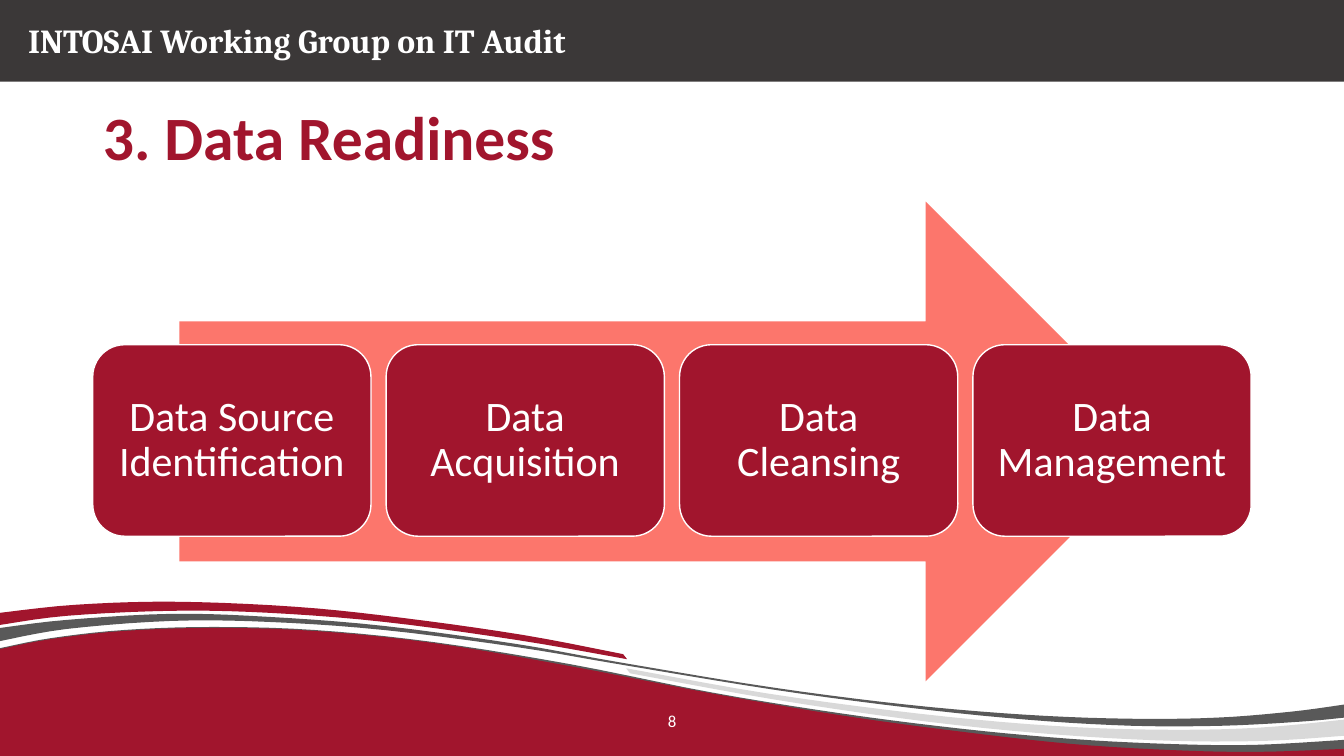
import pptx
import pptx.util
import pptx.dml.color
import pptx.enum.shapes
import pptx.enum.text

Inches = pptx.util.Inches
Pt = pptx.util.Pt
SHAPE = pptx.enum.shapes.MSO_SHAPE
ALIGN = pptx.enum.text.PP_ALIGN
MIDDLE = pptx.enum.text.MSO_ANCHOR.MIDDLE

WIDTH, HEIGHT = 13.33, 7.5
HEADER = "INTOSAI Working Group on IT Audit"
TITLE = "3. Data Readiness"
STEPS = ["Data Source Identification", "Data Acquisition", "Data Cleansing", "Data Management"]
PAGE = "8"
COLORS = {"red": "A1152D", "gray": "595959", "silver": "D9D9D9",
          "dark": "3B3838", "coral": "FC766C", "white": "FFFFFF"}

FLOOR = [(0, HEIGHT), (WIDTH, HEIGHT)]
WAVES = [
    ("gray",
     [(0, 6.43), (0.51, 6.33), (1.23, 6.25), (2.1, 6.22), (3.12, 6.25), (4.3, 6.37),
      (5.66, 6.59), (7.06, 6.87), (8.36, 7.08), (9.54, 7.23), (10.62, 7.33),
      (11.58, 7.38), (12.44, 7.39), (13.33, 7.34)],
     FLOOR),
    ("red",
     [(0, 6.44), (0.51, 6.34), (1.23, 6.26), (2.1, 6.23), (3.12, 6.26), (4.3, 6.38),
      (5.66, 6.61), (7.06, 6.88), (8.36, 7.1), (9.54, 7.26), (10.62, 7.38),
      (11.58, 7.44), (12.44, 7.46), (13.33, 7.43)],
     FLOOR),
    ("gray",
     [(0, 6.23), (0.66, 6.15), (1.7, 6.09), (2.67, 6.12), (3.81, 6.21), (5.13, 6.39),
      (6.14, 6.57), (7.66, 6.82), (8.99, 6.99), (10.16, 7.09), (11.18, 7.13),
      (12.06, 7.12), (12.81, 7.06), (13.33, 6.99)],
     [(0, 6.36), (0.66, 6.24), (1.7, 6.16), (2.67, 6.17), (3.81, 6.25), (5.13, 6.42),
      (6.14, 6.59), (7.66, 6.84), (9.01, 7.02), (10.19, 7.14), (11.22, 7.2),
      (12.12, 7.2), (12.89, 7.16), (13.33, 7.12)]),
    ("red",
     [(0, 6.08), (0.75, 6), (1.73, 5.97), (2.93, 6.02), (3.99, 6.13), (5.19, 6.3), (6.18, 6.49)],
     [(0, 6.2), (0.66, 6.11), (1.7, 6.06), (2.67, 6.08), (3.81, 6.17), (5.13, 6.35), (6.22, 6.54)]),
    ("silver",
     [(6.21, 6.63), (7.61, 6.88), (9.11, 7.08), (10.42, 7.2), (11.53, 7.24), (12.48, 7.22), (13.33, 7.14)],
     [(6.25, 6.68), (7.68, 6.94), (9.2, 7.16), (10.51, 7.29), (11.63, 7.35), (12.56, 7.35), (13.33, 7.3)]),
]


def color(name):
    return pptx.dml.color.RGBColor.from_string(COLORS[name])


def smooth(knots, parts=5):
    ends = [knots[0]] + knots + [knots[-1]]
    points = [knots[0]]
    for a, b, c, d in zip(ends, ends[1:], ends[2:], ends[3:]):
        for i in range(1, parts + 1):
            t = i / parts
            points.append(tuple(
                (2 * q + (r - p) * t + (2 * p - 5 * q + 4 * r - s) * t ** 2
                 + (3 * q - p - 3 * r + s) * t ** 3) / 2
                for p, q, r, s in zip(a, b, c, d)))
    return points


def paint(sp, fill, line=None):
    sp.shadow.inherit = False
    sp.fill.solid()
    sp.fill.fore_color.rgb = color(fill)
    if line:
        sp.line.color.rgb = color(line)
        sp.line.width = Pt(1)
    else:
        sp.line.fill.background()


def add_shape(s, kind, box, fill, line=None):
    sp = s.shapes.add_shape(kind, *map(Inches, box))
    paint(sp, fill, line)
    return sp


def add_wave(s, fill, top, bottom):
    outline = smooth(top) + smooth(bottom)[::-1]
    points = [(Inches(x), Inches(y)) for x, y in outline]
    builder = s.shapes.build_freeform(*points[0])
    builder.add_line_segments(points[1:], close=True)
    paint(builder.convert_to_shape(), fill)


def write(sp, text, size, name="white", font="Calibri", bold=False, align=ALIGN.LEFT, spacing=1.0):
    tf = sp.text_frame
    tf.word_wrap = True
    tf.auto_size = pptx.enum.text.MSO_AUTO_SIZE.NONE
    tf.vertical_anchor = MIDDLE
    p = tf.paragraphs[0]
    p.alignment = align
    p.line_spacing = spacing
    r = p.add_run()
    r.text = text
    r.font.name = font
    r.font.size = Pt(size)
    r.font.bold = bold
    r.font.color.rgb = color(name)
    return tf


def main():
    prs = pptx.Presentation()
    prs.slide_width, prs.slide_height = Inches(WIDTH), Inches(HEIGHT)
    s = prs.slides.add_slide(prs.slide_layouts[5])

    for wave in WAVES:
        add_wave(s, *wave)

    add_shape(s, SHAPE.RECTANGLE, (0, 0, WIDTH, 0.81), "dark")
    header = s.shapes.add_textbox(*map(Inches, (0.18, 0.15, 6.58, 0.5)))
    write(header, HEADER, 24, font="Cambria", bold=True)

    title = s.shapes.title
    title.left, title.top, title.width, title.height = map(Inches, (0.92, 0.93, 11.5, 0.92))
    write(title, TITLE, 44, "red", bold=True, spacing=0.9)

    add_shape(s, SHAPE.RIGHT_ARROW, (1.78, 2, 9.78, 4.76), "coral")
    left, step_width, pitch = 0.92, 2.76, 2.91
    for i, step in enumerate(STEPS):
        box = (left + i * pitch, 3.42, step_width, 1.9)
        sp = add_shape(s, SHAPE.ROUNDED_RECTANGLE, box, "red", "white")
        tf = write(sp, step, 30, align=ALIGN.CENTER, spacing=0.9)
        tf.margin_left = tf.margin_right = tf.margin_top = tf.margin_bottom = Inches(0.12)

    page = s.shapes.add_textbox(*map(Inches, (5.89, 6.95, 1.55, 0.4)))
    write(page, PAGE, 12, align=ALIGN.CENTER)

    prs.save("out.pptx")


if __name__ == "__main__":
    main()
